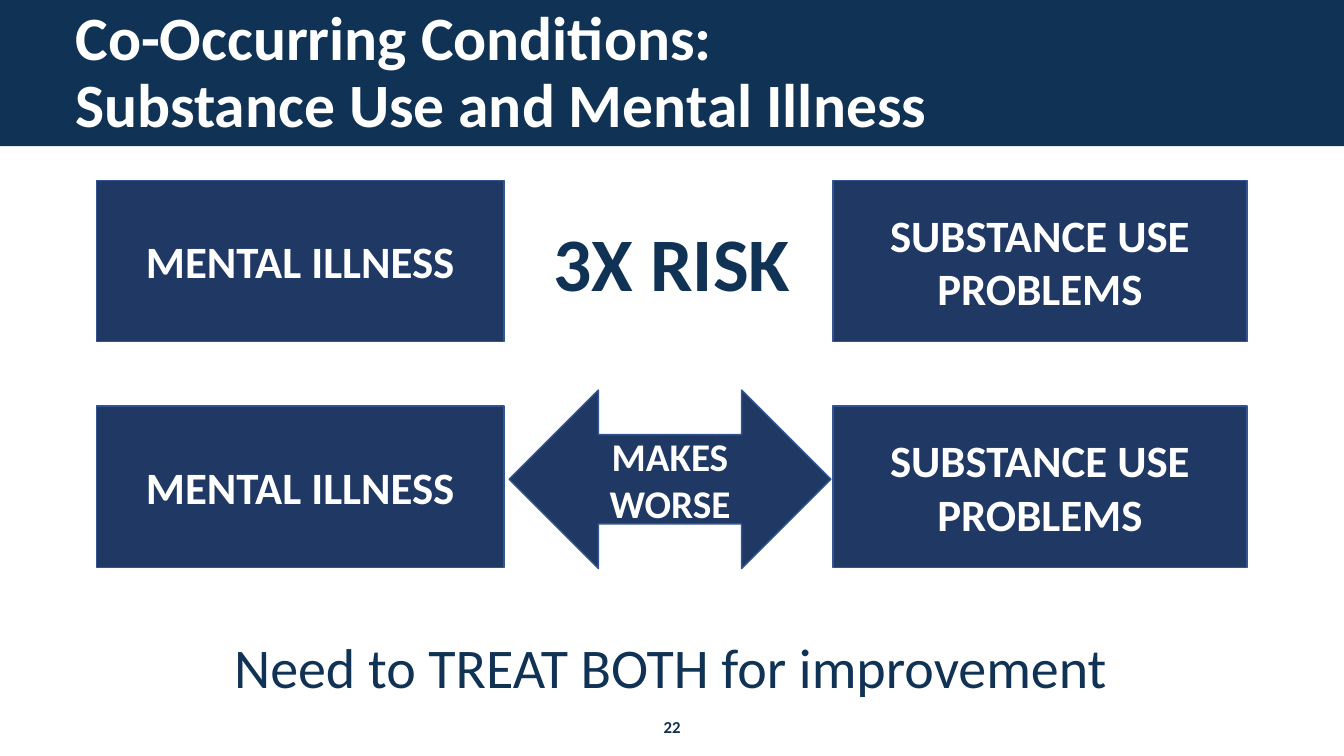
from pptx import Presentation
from pptx import util as u
from pptx.dml.color import RGBColor
from pptx.enum import shapes, text

NAVY, BLUE, EDGE, WHITE = "103255", "203864", "325491", "FFFFFF"


def add_box(kind, x, y, w, h, fill=None, line=None):
    box = [u.Inches(v) for v in (x, y, w, h)]
    if kind is None:
        return s.shapes.add_textbox(*box)
    sp = s.shapes.add_shape(kind, *box)
    sp.shadow.inherit = False
    sp.fill.solid()
    sp.fill.fore_color.rgb = RGBColor.from_string(fill)
    if line:
        sp.line.color.rgb = RGBColor.from_string(line)
        sp.line.width = u.Pt(1)
    else:
        sp.line.fill.background()
    return sp


def write(sp, words, size, color=WHITE, bold=True, align=text.PP_ALIGN.CENTER,
          anchor=text.MSO_ANCHOR.MIDDLE, wrap=True, spacing=1.0):
    tf = sp.text_frame
    tf.word_wrap = wrap
    tf.vertical_anchor = anchor
    tf.text = words
    for p in tf.paragraphs:
        p.alignment = align
        p.line_spacing = spacing
        p.font.name = "Calibri"
        p.font.size = u.Pt(size)
        p.font.bold = bold
        p.font.color.rgb = RGBColor.from_string(color)


prs = Presentation()
prs.slide_width, prs.slide_height = u.Inches(13.33), u.Inches(7.5)
s = prs.slides.add_slide(prs.slide_layouts[6])
rect = shapes.MSO_SHAPE.RECTANGLE
top = text.MSO_ANCHOR.TOP

add_box(rect, 0, 0, 13.33, 1.45, NAVY)
write(add_box(None, 6.09, 7.06, 1.15, 0.3), "22", 12, NAVY, anchor=top)
write(add_box(None, 0.65, 0.4, 12.04, 0.67),
      "Co-Occurring Conditions:\vSubstance Use and Mental Illness", 44,
      align=text.PP_ALIGN.LEFT, spacing=0.9)

columns = [(0.96, 4.04, "MENTAL ILLNESS"), (8.26, 4.11, "SUBSTANCE USE PROBLEMS")]
for y in (1.79, 4.03):
    for x, w, words in columns:
        write(add_box(rect, x, y, w, 1.6, BLUE, EDGE), words, 32)

write(add_box(None, 5.38, 2.09, 2.57, 1.01), "3X RISK", 54, NAVY, anchor=top, wrap=False)
arrow = add_box(shapes.MSO_SHAPE.LEFT_RIGHT_ARROW, 5.05, 3.87, 3.19, 1.77, BLUE, EDGE)
write(arrow, "MAKES\nWORSE", 28)
write(add_box(None, 0.63, 6.23, 12.04, 0.87), "Need to TREAT BOTH for improvement",
      40, NAVY, bold=False, anchor=top)

prs.save("out.pptx")
